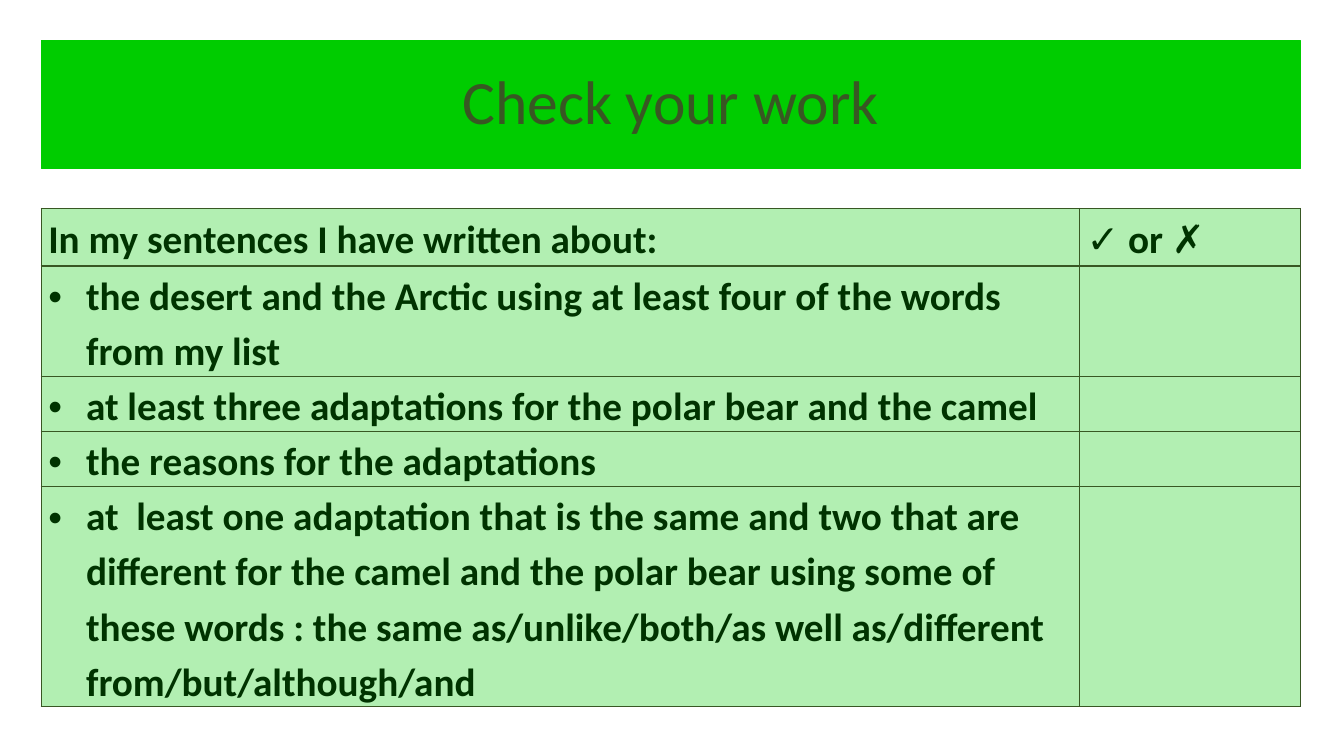
"""Build the 'Check your work' checklist slide."""
from lxml.etree import SubElement
from pptx import Presentation
from pptx.dml.color import RGBColor
from pptx.enum.shapes import MSO_SHAPE
from pptx.enum.text import MSO_ANCHOR, PP_ALIGN
from pptx.oxml.ns import qn
from pptx.util import Pt

TITLE = "Check your work"
HEADS = ("In my sentences I have written about:", "✓ or ✗")
CHECKS = (
    "the desert and the Arctic using at least four of the words from my list",
    "at least three adaptations for the polar bear and the camel",
    "the reasons for the adaptations",
    "at  least one adaptation that is the same and two that are different "
    "for the camel and the polar bear using some of these words : "
    "the same as/unlike/both/as well as/different from/but/although/and",
)
WIDTHS = (741.6, 157.7)
HEIGHTS = (41, 74.9, 36.7, 36.7, 152.6)
LEFT, TOP, WIDE = 29.5, 149, sum(WIDTHS)
BANNER = (29, 91.5)

THEME = {
    "font": "Calibri",
    "green": RGBColor.from_string("00CC00"),
    "olive": RGBColor.from_string("385723"),
    "ink": RGBColor.from_string("003300"),
    "title": 44,
    "body": 28,
    "tint": 30000,
    "indent": 27,
}


def write(para, text, size, color, bold=False):
    run = para.add_run()
    run.text = text
    font = run.font
    font.name, font.size, font.bold = THEME["font"], Pt(size), bold
    font.color.rgb = color


def border(cell):
    props = cell._tc.get_or_add_tcPr()
    for side in ("a:lnL", "a:lnR", "a:lnT", "a:lnB"):
        line = SubElement(props, qn(side), w=str(Pt(1)))
        paint = SubElement(line, qn("a:solidFill"))
        SubElement(paint, qn("a:srgbClr"), val=str(THEME["olive"]))


def tint(cell):
    cell.fill.solid()
    cell.fill.fore_color.rgb = THEME["green"]
    color = cell._tc.tcPr.find(qn("a:solidFill")).find(qn("a:srgbClr"))
    SubElement(color, qn("a:alpha"), val=str(THEME["tint"]))


def bullet(para):
    props = para._p.get_or_add_pPr()
    props.set("marL", str(Pt(THEME["indent"])))
    props.set("indent", str(-Pt(THEME["indent"])))
    SubElement(props, qn("a:buFont"), typeface="Arial")
    SubElement(props, qn("a:buChar"), char="•")


def add_list(slide):
    rows = [HEADS] + [(check, "") for check in CHECKS]
    frame = slide.shapes.add_table(
        len(rows), len(WIDTHS), Pt(LEFT), Pt(TOP), Pt(WIDE), Pt(sum(HEIGHTS)))
    table = frame.table
    table.first_row = table.horz_banding = False
    for col, width in zip(table.columns, WIDTHS):
        col.width = Pt(width)
    for row, height in zip(table.rows, HEIGHTS):
        row.height = Pt(height)
    for i, row in enumerate(rows):
        for j, text in enumerate(row):
            cell = table.cell(i, j)
            border(cell)
            tint(cell)
            if not text:
                continue
            cell.margin_left = cell.margin_right = Pt(5)
            cell.margin_top = cell.margin_bottom = 0
            para = cell.text_frame.paragraphs[0]
            para.line_spacing = 1.15
            if i:
                bullet(para)
            write(para, text, THEME["body"], THEME["ink"], True)


def add_banner(slide):
    top, height = BANNER
    shape = slide.shapes.add_shape(
        MSO_SHAPE.RECTANGLE, Pt(LEFT), Pt(top), Pt(WIDE), Pt(height))
    shape.shadow.inherit = False
    shape.fill.solid()
    shape.fill.fore_color.rgb = THEME["green"]
    shape.line.color.rgb = THEME["green"]
    shape.line.width = Pt(0.5)
    frame = shape.text_frame
    frame.word_wrap = True
    frame.vertical_anchor = MSO_ANCHOR.MIDDLE
    para = frame.paragraphs[0]
    para.alignment = PP_ALIGN.CENTER
    para.line_spacing = 0.9
    write(para, TITLE, THEME["title"], THEME["olive"])


def main():
    deck = Presentation()
    deck.slide_width, deck.slide_height = Pt(960), Pt(540)
    slide = deck.slides.add_slide(deck.slide_layouts[6])
    add_list(slide)
    add_banner(slide)
    deck.save("out.pptx")


if __name__ == "__main__":
    main()
